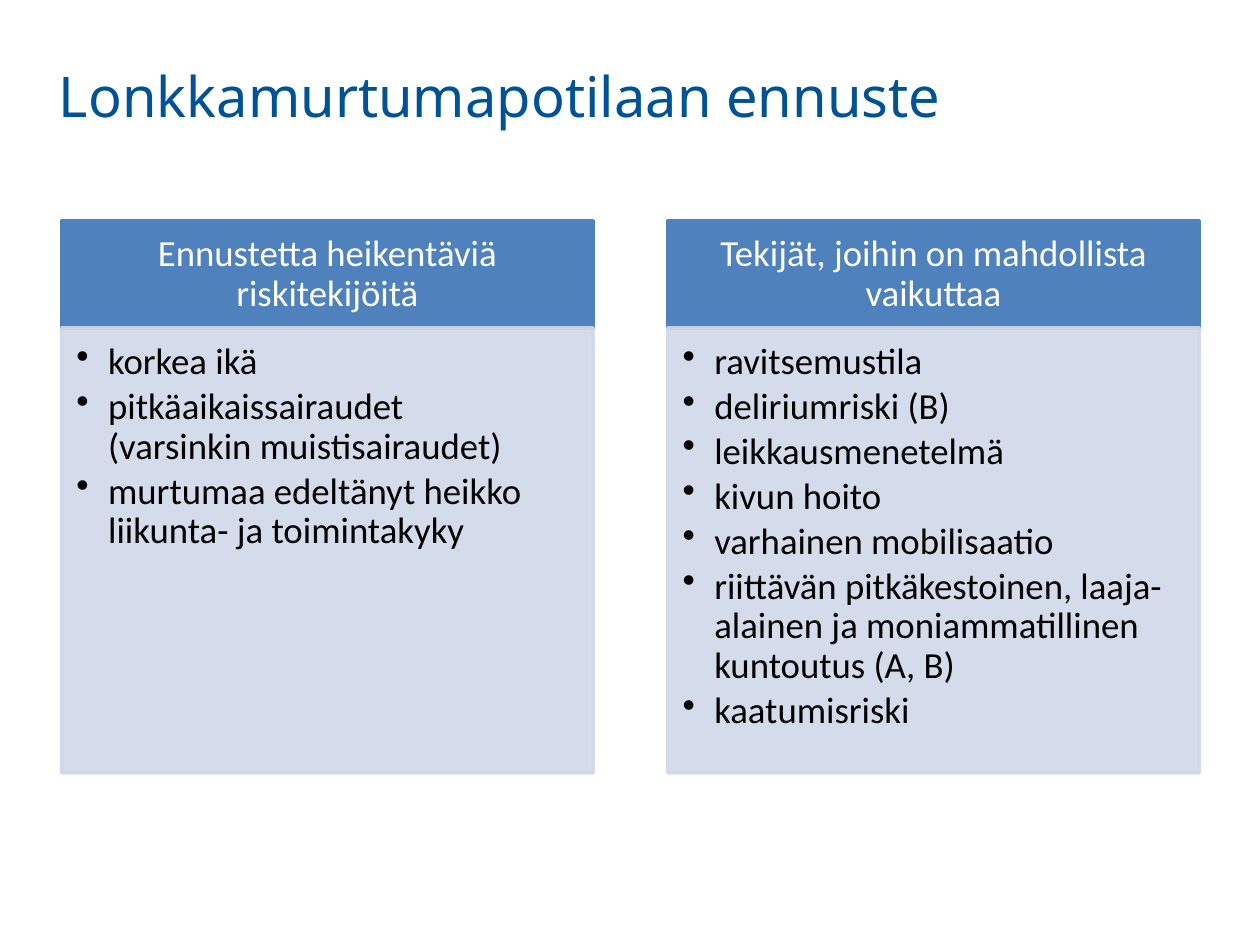
"""Build a slide comparing prognostic factors of hip fracture patients in two columns."""
from dataclasses import dataclass

from lxml.etree import SubElement
from pptx import Presentation
from pptx.dml.color import RGBColor as RGB
from pptx.enum.shapes import MSO_SHAPE as SHAPE
from pptx.enum.text import MSO_ANCHOR as ANCHOR, PP_ALIGN as ALIGN
from pptx.oxml.ns import qn
from pptx.util import Cm, Pt


@dataclass(frozen=True)
class Theme:
    title: RGB = RGB(0x00, 0x52, 0x96)
    header: RGB = RGB(0x4F, 0x81, 0xBD)
    panel: RGB = RGB(0xD0, 0xD8, 0xE8)
    light: RGB = RGB(0xFF, 0xFF, 0xFF)
    dark: RGB = RGB(0x00, 0x00, 0x00)
    title_font: str = "Noto Sans"
    body_font: str = "Calibri"
    title_size: Pt = Pt(32)
    body_size: Pt = Pt(21)
    panel_alpha: int = 90


class Deck:
    def __init__(self, theme, slide):
        self.theme, self.s = theme, slide

    def add_text(self, p, text, font, size, color):
        for i, line in enumerate(text.split("\n")):
            if i:
                p.add_line_break()
            r = p.add_run()
            r.text = line
            r.font.name, r.font.size = font, size
            r.font.color.rgb = color

    def frame(self, sp, anchor, insets):
        tf = sp.text_frame
        tf.word_wrap = True
        tf.vertical_anchor = anchor
        tf.margin_left, tf.margin_top, tf.margin_right, tf.margin_bottom = map(Cm, insets)
        return tf

    def title(self, text, x, y, w, h):
        sp = self.s.shapes.add_textbox(Cm(x), Cm(y), Cm(w), Cm(h))
        tf = self.frame(sp, ANCHOR.TOP, (0.25, 0.13, 0.25, 0.13))
        t = self.theme
        self.add_text(tf.paragraphs[0], text, t.title_font, t.title_size, t.title)

    def box(self, x, y, w, h, color, alpha=100):
        sp = self.s.shapes.add_shape(SHAPE.RECTANGLE, Cm(x), Cm(y), Cm(w), Cm(h))
        sp.shadow.inherit = False
        sp.fill.solid()
        sp.fill.fore_color.rgb = color
        sp.line.color.rgb = color
        sp.line.width = Pt(2)
        if alpha < 100:
            for clr in sp._element.spPr.iter(qn("a:srgbClr")):
                SubElement(clr, qn("a:alpha"), val=str(alpha * 1000))
        return sp

    def header(self, text, x, y, w, h):
        t = self.theme
        sp = self.box(x, y, w, h, t.header)
        p = self.frame(sp, ANCHOR.MIDDLE, (0.41, 0.23, 0.41, 0.23)).paragraphs[0]
        p.alignment, p.line_spacing = ALIGN.CENTER, 0.9
        self.add_text(p, text, t.body_font, t.body_size, t.light)

    def bullets(self, items, x, y, w, h):
        t = self.theme
        sp = self.box(x, y, w, h, t.panel, t.panel_alpha)
        tf = self.frame(sp, ANCHOR.TOP, (0.3, 0.3, 0.41, 0.46))
        for i, item in enumerate(items):
            p = tf.add_paragraph() if i else tf.paragraphs[0]
            pPr = p._p.get_or_add_pPr()
            pPr.set("marL", str(Cm(0.64)))
            pPr.set("indent", str(-Cm(0.64)))
            SubElement(pPr, qn("a:buChar"), char="•")
            p.level, p.alignment = 1, ALIGN.LEFT
            p.line_spacing, p.space_after = 0.9, Pt(3)
            self.add_text(p, item, t.body_font, t.body_size, t.dark)


COLUMNS = (
    ("Ennustetta heikentäviä riskitekijöitä", (
        "korkea ikä",
        "pitkäaikaissairaudet\n(varsinkin muistisairaudet)",
        "murtumaa edeltänyt heikko liikunta- ja toimintakyky",
    )),
    ("Tekijät, joihin on mahdollista vaikuttaa", (
        "ravitsemustila",
        "deliriumriski (B)",
        "leikkausmenetelmä",
        "kivun hoito",
        "varhainen mobilisaatio",
        "riittävän pitkäkestoinen, laaja-alainen ja moniammatillinen kuntoutus (A, B)",
        "kaatumisriski",
    )),
)


def main():
    prs = Presentation()
    prs.slide_width, prs.slide_height = Cm(25.4), Cm(19.05)
    deck = Deck(Theme(), prs.slides.add_slide(prs.slide_layouts[6]))
    deck.title("Lonkkamurtumapotilaan ennuste", 0.94, 1.12, 22.91, 3.2)

    left, top, width, gap = 1.24, 4.45, 10.72, 1.5
    header_h, panel_h = 2.16, 8.97
    for i, (heading, items) in enumerate(COLUMNS):
        x = left + i * (width + gap)
        deck.header(heading, x, top, width, header_h)
        deck.bullets(items, x, top + header_h, width, panel_h)
    prs.save("out.pptx")


if __name__ == "__main__":
    main()
